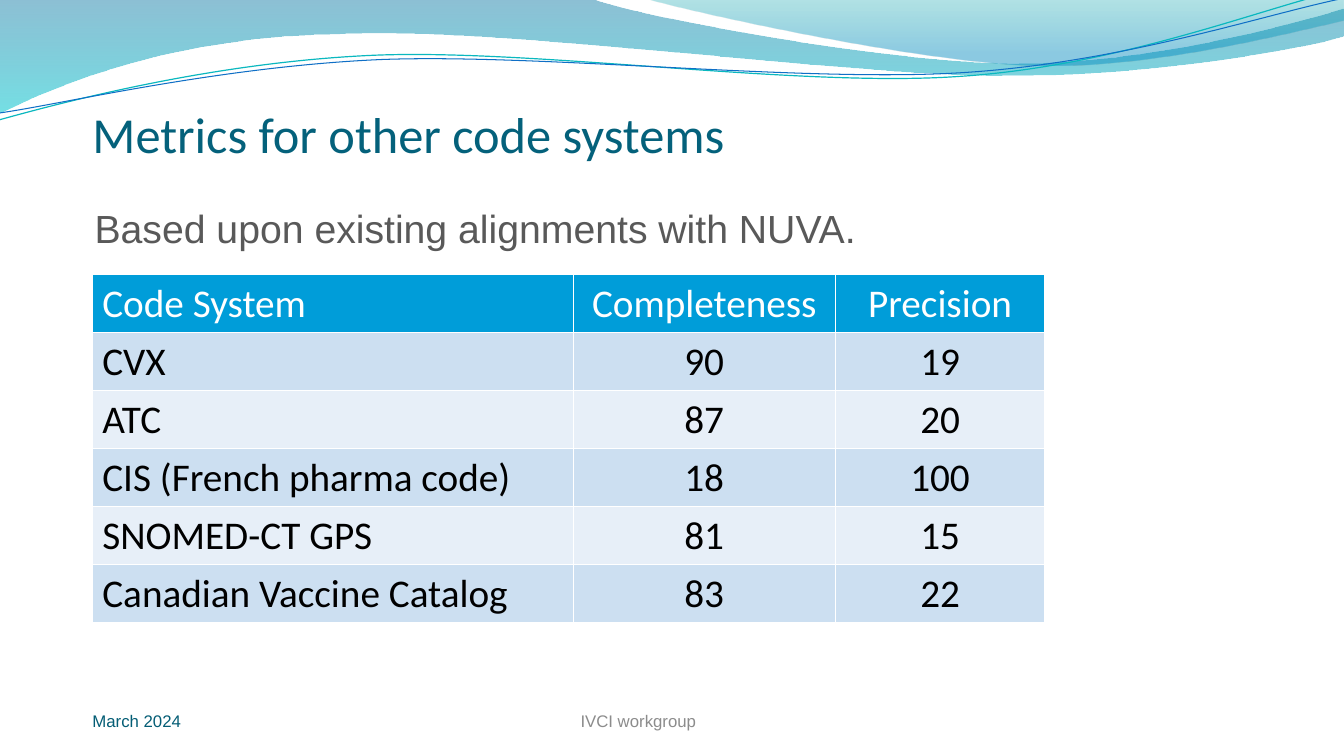
from dataclasses import dataclass
from math import cos, radians, sin

from lxml.etree import SubElement
from pptx import Presentation
from pptx.dml.color import RGBColor
from pptx.enum.text import MSO_ANCHOR as Anchor, PP_ALIGN as Align
from pptx.oxml.ns import qn
from pptx.shapes.autoshape import Shape
from pptx.slide import Slide
from pptx.table import _Cell as Cell
from pptx.text.text import TextFrame
from pptx.util import Emu, Inches, Pt

COLORS = {
    "title": "04617B", "subtitle": "595959", "footer": "8C8C8C", "date": "045D75",
    "header": "009DD9", "odd_row": "CCDFF1", "even_row": "E7EFF8",
    "white": "FFFFFF", "black": "000000",
    "wave_blue": "0074A1", "wave_cyan": "00C6CF",
    "crest_teal": "00A1A9", "crest_blue": "008BBF",
    "line_teal": "0AB8BF", "line_blue": "0F6FC6",
}
# The slide is a grid of 100 columns by 100 rows
WIDTH, HEIGHT = Inches(13.33), Inches(7.5)
LINE_CENTER, LINE_TILT = (50, 7.8), 2.7
NO_MARGINS = {"margin_left": 0, "margin_top": 0, "margin_right": 0, "margin_bottom": 0}


@dataclass
class Stop:
    position: float
    color: str
    opacity: int


@dataclass
class Wave:
    """Each step is an end point, or two control points and an end point."""
    start: tuple[float, float]
    steps: list[tuple[float, ...]]
    stops: tuple[Stop, ...] = ()
    line_color: str = ""
    line_width: float = 0
    tilt: float = 0


@dataclass
class Label:
    text: str
    box: tuple[float, float, float, float]
    size: int
    color: str
    frame: dict
    align: Align = Align.LEFT
    font: str = "Arial"


WAVES = [
    Wave((0, 0), [(44.03, -0.13), (47.55, 2.27, 66.38, 8.4, 75.83, 8.4),
                  (85.35, 8.4, 95.85, 3.47, 99.98, 1.2), (100.13, 4.8),
                  (98.33, 5.87, 87, 10.13, 74.55, 10),
                  (62.18, 10, 38.18, 3.73, 25.73, 4.53),
                  (12.9, 4.8, 4.58, 11.07, -0.08, 15.07), (0, 0)],
         stops=(Stop(0, "wave_blue", 45), Stop(1, "wave_cyan", 55))),
    Wave((47.93, -0.13), [(50.93, 1.47, 68.18, 8.27, 76.88, 8.67),
                          (85.58, 9.2, 96.15, 4.27, 99.98, 2.8), (99.98, 0),
                          (47.93, -0.13)],
         stops=(Stop(0, "crest_teal", 30), Stop(0.8, "crest_blue", 45))),
    Wave((-0.08, 15.87), [(4.8, 13.47, 15.83, 8.27, 27.68, 7.33),
                          (39.53, 6.4, 59.25, 11.6, 71.25, 10.13),
                          (83.25, 8.8, 93.9, 1.07, 99.83, -1.33)],
         line_color="line_teal", line_width=0.85, tilt=LINE_TILT),
    Wave((0, 14.93), [(4.73, 13.73, 16.35, 8.8, 28.35, 7.87),
                      (40.28, 7.07, 59.7, 10.93, 71.63, 9.6),
                      (83.63, 8.27, 94.13, 1.87, 100.05, -0.27)],
         line_color="line_blue", line_width=0.75, tilt=LINE_TILT),
]
TITLE = Label("Metrics for other code systems", (6.88, 10.27, 88.12, 11.33), 36, "title",
              {**NO_MARGINS, "margin_top": Inches(0.05), "word_wrap": True,
               "vertical_anchor": Anchor.BOTTOM}, font="Calibri")
LABELS = [
    Label("Based upon existing alignments with NUVA.", (6.3, 26.4, 58.8, 7.6), 28,
          "subtitle", {"word_wrap": False}),
    Label("IVCI workgroup", (29.16, 92.67, 36.68, 5.33), 12, "footer",
          {"word_wrap": True, "vertical_anchor": Anchor.MIDDLE}, Align.CENTER),
    Label("March 2024", (6.88, 92.67, 22.5, 5.33), 12, "date",
          {**NO_MARGINS, "word_wrap": True, "vertical_anchor": Anchor.MIDDLE}),
]
METRICS = [
    ("Code System", "Completeness", "Precision"),
    ("CVX", "90", "19"),
    ("ATC", "87", "20"),
    ("CIS (French pharma code)", "18", "100"),
    ("SNOMED-CT GPS", "81", "15"),
    ("Canadian Vaccine Catalog", "83", "22"),
]
TABLE_LEFT, TABLE_TOP, ROW_HEIGHT = 6.87, 36.33, 7.67
COLUMN_WIDTHS = (35.78, 19.5, 15.6)


def across(columns: float) -> Emu:
    return Emu(round(WIDTH * columns / 100))


def down(rows: float) -> Emu:
    return Emu(round(HEIGHT * rows / 100))


def rgb(name: str) -> RGBColor:
    return RGBColor.from_string(COLORS[name])


def level_points(numbers: tuple[float, ...], tilt: float) -> list[tuple[int, int]]:
    """Points as they lie before the shape is turned back by the tilt."""
    center_x, center_y = across(LINE_CENTER[0]), down(LINE_CENTER[1])
    cosine, sine = cos(radians(tilt)), sin(radians(tilt))
    points = []
    for x, y in zip(numbers[::2], numbers[1::2]):
        dx, dy = across(x) - center_x, down(y) - center_y
        points.append((round(center_x + dx * cosine - dy * sine),
                       round(center_y + dx * sine + dy * cosine)))
    return points


def add_wave(slide: Slide, wave: Wave) -> None:
    steps = [level_points(step, wave.tilt) for step in wave.steps]
    builder = slide.shapes.build_freeform(*level_points(wave.start, wave.tilt)[0])
    builder.add_line_segments([step[-1] for step in steps], close=bool(wave.stops))
    shape = builder.convert_to_shape()
    # Bend the segments that have control points
    for segment, step in zip(list(shape.element.iter(qn("a:lnTo"))), steps):
        if len(step) == 3:
            segment.tag = qn("a:cubicBezTo")
            for index, (x, y) in enumerate(step[:2]):
                point = SubElement(segment, qn("a:pt"), x=str(x - shape.left),
                                   y=str(y - shape.top))
                segment.insert(index, point)
    shape.rotation = -wave.tilt
    shape.shadow.inherit = False
    if not wave.stops:
        shape.fill.background()
        shape.line.color.rgb = rgb(wave.line_color)
        shape.line.width = Pt(wave.line_width)
        return
    shape.line.fill.background()
    shape.fill.gradient()
    shape.fill.gradient_angle = 270
    for target, stop in zip(shape.fill.gradient_stops, wave.stops):
        target.position = stop.position
        target.color.rgb = rgb(stop.color)
    for element, stop in zip(shape.element.iter(qn("a:srgbClr")), wave.stops):
        SubElement(element, qn("a:alpha"), val=str(stop.opacity * 1000))


def write(frame: TextFrame, text: str, size: int, color: str, font: str, align: Align) -> None:
    paragraph = frame.paragraphs[0]
    paragraph.alignment = align
    run = paragraph.add_run()
    run.text = text
    for name, value in {"size": Pt(size), "name": font, "bold": False}.items():
        setattr(run.font, name, value)
    run.font.color.rgb = rgb(color)


def fill_label(shape: Shape, label: Label) -> None:
    left, top, width, height = label.box
    place = {"left": across(left), "top": down(top),
             "width": across(width), "height": down(height)}
    for target, values in ((shape, place), (shape.text_frame, label.frame)):
        for name, value in values.items():
            setattr(target, name, value)
    write(shape.text_frame, label.text, label.size, label.color, label.font, label.align)


def add_borders(cell: Cell) -> None:
    properties = cell._tc.get_or_add_tcPr()
    for side in ("lnL", "lnR", "lnT", "lnB"):
        line = SubElement(properties, qn(f"a:{side}"), w=str(Pt(1)))
        SubElement(SubElement(line, qn("a:solidFill")), qn("a:srgbClr"), val=COLORS["white"])


def add_metrics_table(slide: Slide) -> None:
    table = slide.shapes.add_table(
        len(METRICS), len(COLUMN_WIDTHS), across(TABLE_LEFT), down(TABLE_TOP),
        across(sum(COLUMN_WIDTHS)), down(ROW_HEIGHT * len(METRICS))).table
    for column, width in zip(table.columns, COLUMN_WIDTHS):
        column.width = across(width)
    for row, texts in enumerate(METRICS):
        table.rows[row].height = down(ROW_HEIGHT)
        fill = "header" if row == 0 else "odd_row" if row % 2 else "even_row"
        for column, text in enumerate(texts):
            cell = table.cell(row, column)
            add_borders(cell)
            cell.fill.solid()
            cell.fill.fore_color.rgb = rgb(fill)
            write(cell.text_frame, text, 28, "black" if row else "white", "Calibri",
                  Align.CENTER if column else Align.LEFT)


def main() -> None:
    presentation = Presentation()
    presentation.slide_width, presentation.slide_height = WIDTH, HEIGHT
    slide = presentation.slides.add_slide(presentation.slide_layouts[5])
    # Wave decoration, title, table and labels
    for wave in WAVES:
        add_wave(slide, wave)
    fill_label(slide.shapes.title, TITLE)
    add_metrics_table(slide)
    for label in LABELS:
        fill_label(slide.shapes.add_textbox(0, 0, 0, 0), label)
    presentation.save("out.pptx")


if __name__ == "__main__":
    main()
